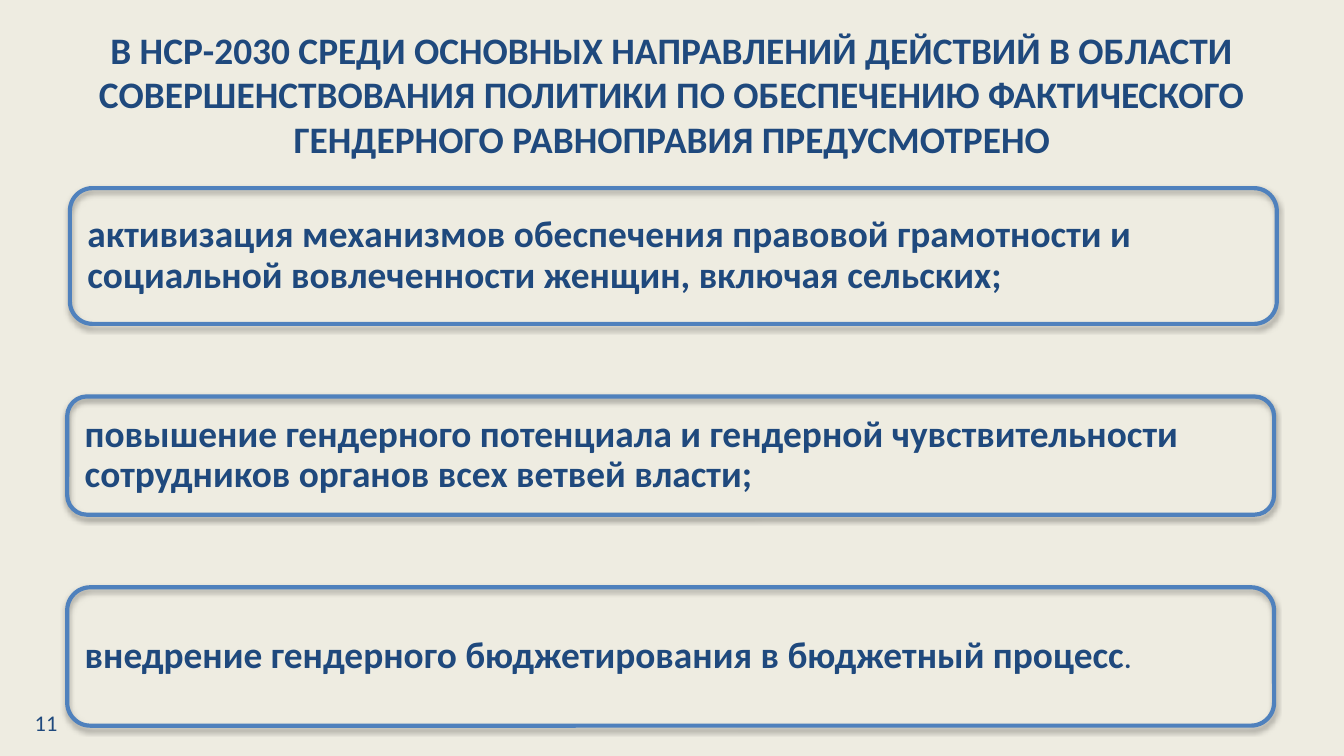
from lxml.etree import SubElement
from pptx import Presentation
from pptx.dml.color import RGBColor
from pptx.enum.shapes import MSO_SHAPE
from pptx.enum.text import MSO_ANCHOR, MSO_AUTO_SIZE, PP_ALIGN
from pptx.oxml.ns import qn
from pptx.util import Inches, Pt

WIDTH = 10
HEIGHT = WIDTH * 9 / 16
BACKGROUND, NAVY, BLUE = "EEECE1", "1F497D", "4F81BD"
TITLE = (
    "В НСР-2030 СРЕДИ ОСНОВНЫХ НАПРАВЛЕНИЙ ДЕЙСТВИЙ В ОБЛАСТИ "
    "СОВЕРШЕНСТВОВАНИЯ ПОЛИТИКИ ПО ОБЕСПЕЧЕНИЮ ФАКТИЧЕСКОГО "
    "ГЕНДЕРНОГО РАВНОПРАВИЯ ПРЕДУСМОТРЕНО"
)
PAGE_NUMBER = "11"
HEADING = {"size": Pt(20), "bold": True}
SMALL = {"size": Pt(14), "bold": True}
NUMBER = {"size": Pt(12), "bold": False}
CARD_WIDTH, CARD_INSET = 8.98, 0.05
CARDS = [
    (0.52, 1.40, 1.01, [("активизация механизмов обеспечения правовой грамотности и "
                         "социальной вовлеченности женщин, включая сельских;", HEADING)]),
    (0.50, 2.95, 0.88, [("повышение гендерного потенциала и гендерной чувствительности "
                         "сотрудников органов всех ветвей власти;", HEADING)]),
    (0.50, 4.37, 1.03, [("внедрение гендерного бюджетирования в бюджетный процесс", HEADING),
                        (".", SMALL)]),
]


def color(value):
    return RGBColor.from_string(value)


def set_values(target, values):
    for name, value in values.items():
        setattr(target, name, value)


def place(shape, left, top, width, height):
    set_values(shape, {"left": Inches(left), "top": Inches(top),
                       "width": Inches(width), "height": Inches(height)})


def write(shape, runs, paragraph_format, **frame_format):
    frame = shape.text_frame
    set_values(frame, {"word_wrap": True, "auto_size": MSO_AUTO_SIZE.NONE,
                       "vertical_anchor": MSO_ANCHOR.MIDDLE, **frame_format})
    paragraph = frame.paragraphs[0]
    set_values(paragraph, paragraph_format)
    for text, font_format in runs:
        run = paragraph.add_run()
        run.text = text
        set_values(run.font, {"name": "Calibri", **font_format})
        run.font.color.rgb = color(NAVY)


def add_text(slide, box, runs, paragraph_format, **frame_format):
    shape = slide.shapes.add_textbox(*map(Inches, box))
    write(shape, runs, paragraph_format, **frame_format)


def add_shadow(shape):
    shape.shadow.inherit = False
    effects = shape._element.spPr.find(qn("a:effectLst"))
    shadow = SubElement(effects, qn("a:outerShdw"), blurRad=str(Pt(3.1)),
                        dist=str(Pt(1.6)), dir="5400000", rotWithShape="0")
    black = SubElement(shadow, qn("a:srgbClr"), val="000000")
    SubElement(black, qn("a:alpha"), val="38000")


def add_card(slide, left, top, height, runs):
    frame = slide.shapes.add_shape(
        MSO_SHAPE.ROUNDED_RECTANGLE, *map(Inches, (left, top, CARD_WIDTH, height)))
    frame.fill.background()
    frame.line.color.rgb = color(BLUE)
    frame.line.width = Pt(2.25)
    add_shadow(frame)
    box = (left + CARD_INSET, top + CARD_INSET,
           CARD_WIDTH - 2 * CARD_INSET, height - 2 * CARD_INSET)
    margins = {f"margin_{side}": Inches(0.08) for side in ("left", "top", "right", "bottom")}
    add_text(slide, box, runs, {"alignment": PP_ALIGN.LEFT, "line_spacing": 0.9}, **margins)


def main():
    presentation = Presentation()
    set_values(presentation, {"slide_width": Inches(WIDTH), "slide_height": Inches(HEIGHT)})
    slide = presentation.slides.add_slide(presentation.slide_layouts[5])
    slide.background.fill.solid()
    slide.background.fill.fore_color.rgb = color(BACKGROUND)
    title = slide.shapes.title
    place(title, 0.5, 0.23, 9, 0.94)
    write(title, [(TITLE, HEADING)], {"alignment": PP_ALIGN.CENTER})
    add_text(slide, (0.16, 5.23, 0.62, 0.3), [(PAGE_NUMBER, NUMBER)],
             {"alignment": PP_ALIGN.LEFT})
    for card in CARDS:
        add_card(slide, *card)
    presentation.save("out.pptx")


if __name__ == "__main__":
    main()
